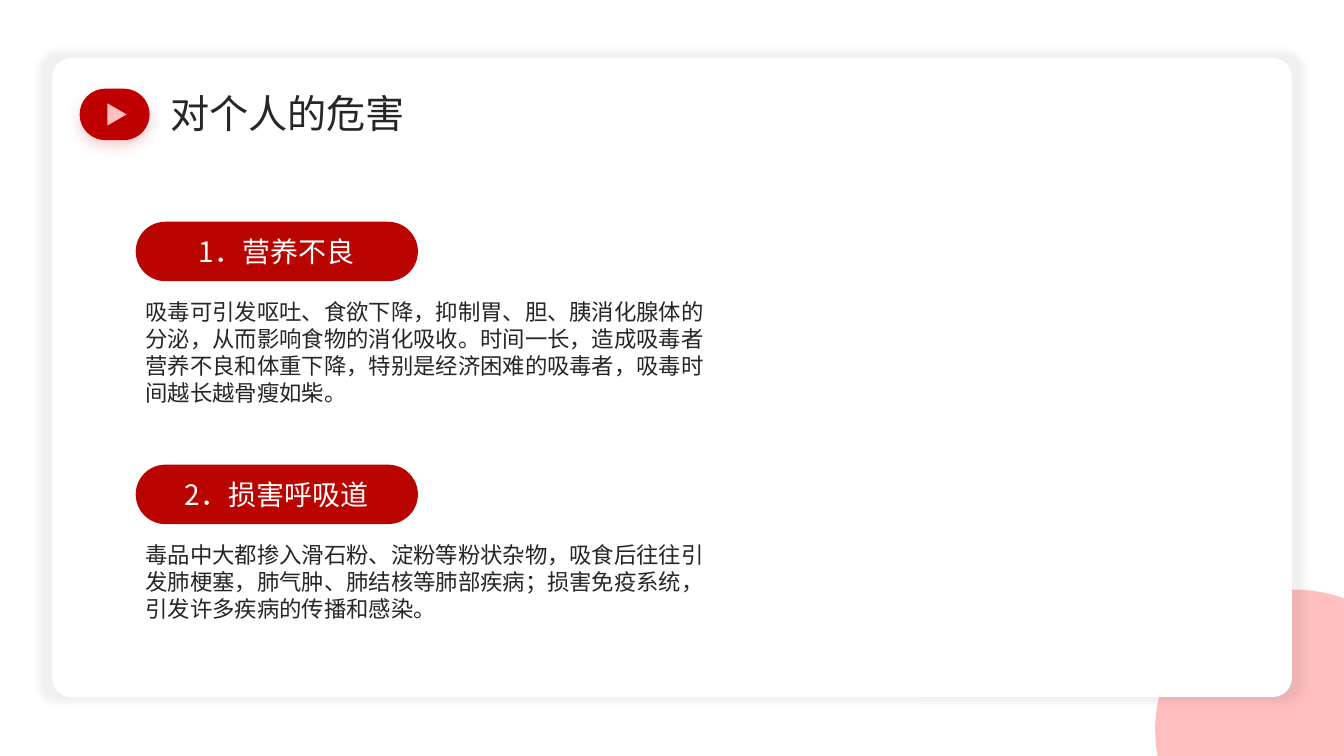
"""Build a slide on how drug abuse harms the individual."""
import math

import lxml.etree
import pptx
import pptx.dml.color
import pptx.enum.shapes
import pptx.enum.text
import pptx.oxml.ns
import pptx.util

WIDTH = pptx.util.Inches(13.333)
HEIGHT = pptx.util.Inches(7.5)
FONT = "Noto Sans CJK SC"
COLORS = {
    "white": "FFFFFF",
    "ink": "262626",
    "pink": "FFBFBF",
    "badge": "C00000",
    "pill": "B90400",
    "glow": "DE0000",
    "black": "000000",
}
LEFT = 10.1
FIRST_TOP = 29.33
TOPIC_STEP = 32.13
BODY_OFFSET = 9.47
TOPICS = [
    ("1．营养不良", 15.73,
     "吸毒可引发呕吐、食欲下降，抑制胃、胆、胰消化腺体的分泌，从而影响食物的消化吸收。"
     "时间一长，造成吸毒者营养不良和体重下降，特别是经济困难的吸毒者，吸毒时间越长越骨瘦如柴。"),
    ("2．损害呼吸道", 12.13,
     "毒品中大都掺入滑石粉、淀粉等粉状杂物，吸食后往往引发肺梗塞，肺气肿、肺结核等肺部疾病；"
     "损害免疫系统，引发许多疾病的传播和感染。"),
]


def across(percent):
    """Return a share of the slide's width."""
    return round(WIDTH * percent / 100)


def down(percent):
    """Return a share of the slide's height."""
    return round(HEIGHT * percent / 100)


def frame(left, top, width, height):
    """Turn percentages of the slide into a position and size."""
    return across(left), down(top), across(width), down(height)


def rgb(name):
    """Look up a named colour."""
    return pptx.dml.color.RGBColor.from_string(COLORS[name])


def paint(shape, color):
    """Give a shape a flat fill with no line or shadow."""
    shape.shadow.inherit = False
    shape.fill.solid()
    shape.fill.fore_color.rgb = rgb(color)
    shape.line.fill.background()


def add_shadow(shape, color, alpha, blur, distance=0, angle=0, scale=100):
    """Add a soft outer shadow to a painted shape."""
    tag = pptx.oxml.ns.qn
    effects = shape._element.spPr.find(tag("a:effectLst"))
    shadow = lxml.etree.SubElement(
        effects, tag("a:outerShdw"),
        blurRad=str(pptx.util.Pt(blur)), dist=str(pptx.util.Pt(distance)),
        dir=str(angle * 60000), sx=str(scale * 1000), sy=str(scale * 1000),
        algn="ctr", rotWithShape="0")
    tint = lxml.etree.SubElement(shadow, tag("a:srgbClr"), val=COLORS[color])
    lxml.etree.SubElement(tint, tag("a:alpha"), val=str(alpha * 1000))


def add_preset(page, kind, place, color, rounding=None):
    """Add a painted preset shape."""
    shape = page.shapes.add_shape(kind, *frame(*place))
    paint(shape, color)
    if rounding is not None:
        shape.adjustments[0] = rounding
    return shape


def write(shape, text, size, color):
    """Write one run of text into a shape's first paragraph."""
    para = shape.text_frame.paragraphs[0]
    span = para.add_run()
    span.text = text
    span.font.size = pptx.util.Pt(size)
    span.font.color.rgb = rgb(color)
    span.font.name = FONT
    lxml.etree.SubElement(
        span.font._element, pptx.oxml.ns.qn("a:ea"), typeface=FONT)
    return para


def add_text(page, place, text, size, wrap):
    """Add a text box in the ink colour."""
    box = page.shapes.add_textbox(*frame(*place))
    box.text_frame.word_wrap = wrap
    box.text_frame.auto_size = pptx.enum.text.MSO_AUTO_SIZE.SHAPE_TO_FIT_TEXT
    write(box, text, size, "ink")


def add_corner_disc(page):
    """Draw the disc that the bottom right corner of the slide cuts off."""
    center_x, center_y, radius = across(96.38), down(96.53), down(18.53)
    start = math.pi - math.asin((HEIGHT - center_y) / radius)
    end = 2 * math.pi - math.acos((WIDTH - center_x) / radius)
    steps = 90
    angles = [start + (end - start) * step / steps for step in range(steps + 1)]
    arc = [(round(center_x + radius * math.cos(angle)),
            round(center_y + radius * math.sin(angle))) for angle in angles]
    builder = page.shapes.build_freeform(*arc[0])
    builder.add_line_segments(arc[1:] + [(WIDTH, HEIGHT)], close=True)
    paint(builder.convert_to_shape(), "pink")


def add_topic(page, top, heading, body_height, body):
    """Add a heading pill with its paragraph below."""
    rounded = pptx.enum.shapes.MSO_SHAPE.ROUNDED_RECTANGLE
    pill = add_preset(page, rounded, (LEFT, top, 21, 7.87), "pill", 0.5)
    pill.text_frame.vertical_anchor = pptx.enum.text.MSO_ANCHOR.MIDDLE
    para = write(pill, heading, 20, "white")
    para.alignment = pptx.enum.text.PP_ALIGN.CENTER
    add_text(page, (LEFT, top + BODY_OFFSET, 44.3, body_height), body, 16, True)


def main():
    """Build and save the deck."""
    deck = pptx.Presentation()
    deck.slide_width, deck.slide_height = WIDTH, HEIGHT
    page = deck.slides.add_slide(deck.slide_layouts[6])
    presets = pptx.enum.shapes.MSO_SHAPE

    add_corner_disc(page)
    card = add_preset(page, presets.ROUNDED_RECTANGLE,
                      (3.88, 7.67, 92.25, 84.53), "white", 0.03)
    add_shadow(card, "black", 5, 5, scale=102)

    badge = add_preset(page, presets.ROUNDED_RECTANGLE,
                       (5.93, 11.73, 5.2, 6.8), "badge", 0.5)
    add_shadow(badge, "glow", 20, 10, distance=4, angle=90)
    arrow = add_preset(page, presets.ISOSCELES_TRIANGLE,
                       (7.88, 13.87, 1.65, 2.53), "pink")
    arrow.rotation = 90
    add_text(page, (11.93, 11.2, 19.2, 7.6), "对个人的危害", 28, False)

    for index, topic in enumerate(TOPICS):
        add_topic(page, FIRST_TOP + index * TOPIC_STEP, *topic)
    deck.save("out.pptx")


if __name__ == "__main__":
    main()
